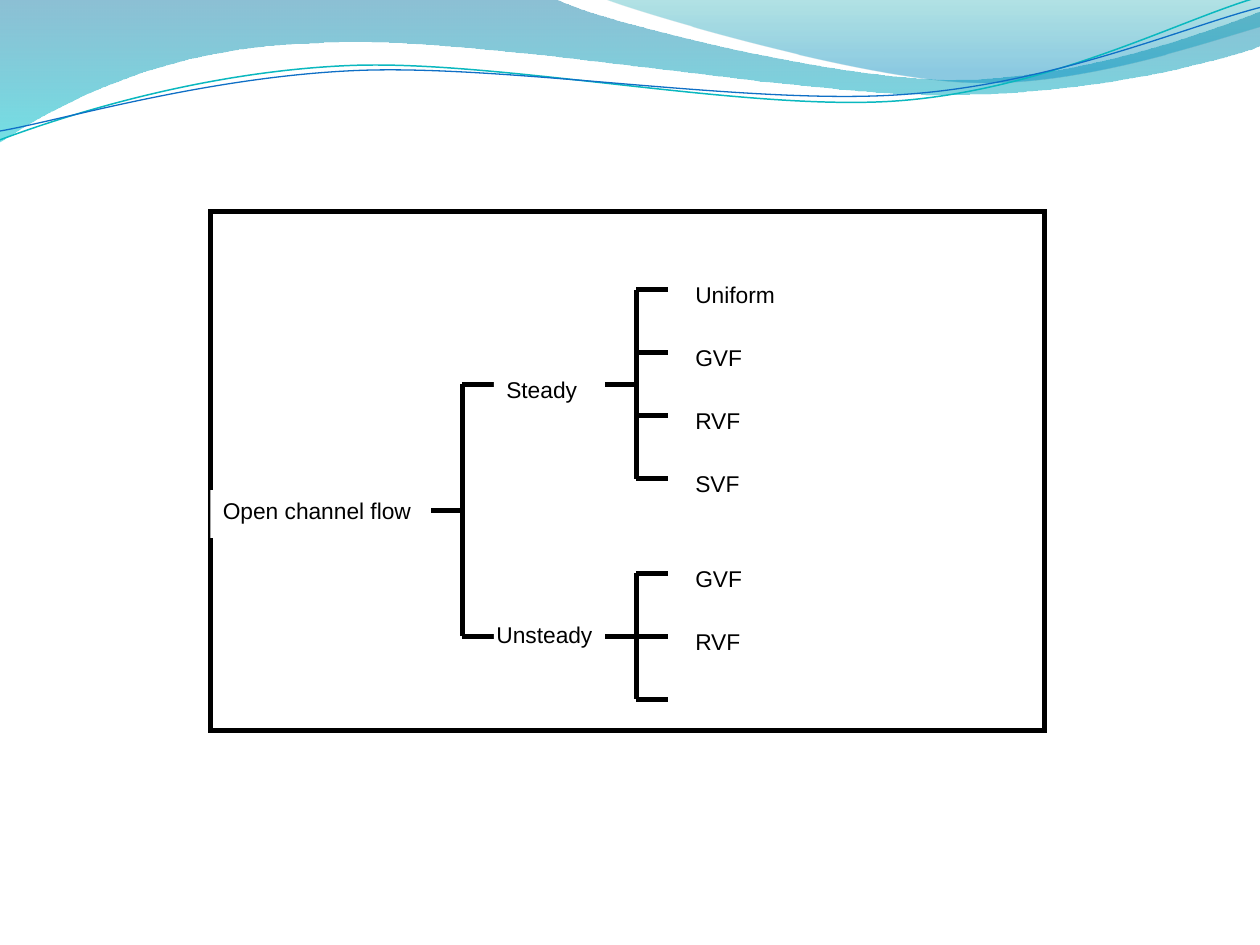
from math import cos, radians, sin

from lxml.etree import SubElement
from pptx import Presentation
from pptx.dml.color import RGBColor
from pptx.enum.shapes import MSO_CONNECTOR, MSO_SHAPE
from pptx.enum.text import MSO_ANCHOR, PP_ALIGN
from pptx.oxml.ns import qn
from pptx.util import Inches, Pt

COLORS = {
    "ink": "000000", "paper": "FFFFFF", "deep": "0074A1", "aqua": "00C6CF",
    "teal": "00A1A9", "sky": "008BBF", "teal_line": "0AB8BF", "blue_line": "0F6FC6",
}
ROOT = "Open channel flow"
BRANCHES = [
    {"text": "Steady", "height": 0.38, "inset": (0.1, 0.05),
     "leaves": [("Uniform", 0.88, 0.38), ("GVF", 0.63, 0.38),
                ("RVF", 0.63, 0.25), ("SVF", 0.63, 0.38)]},
    {"text": "Unsteady", "height": 0.25, "inset": (0.02, 0),
     "leaves": [("GVF", 0.63, 0.38), ("RVF", 0.63, 0.25), None]},
]
FILLED_WAVES = [
    ([[(0, 0)], [(4.4, -0.01)],
      [(4.76, 0.17), (6.64, 0.63), (7.58, 0.63)],
      [(8.53, 0.63), (9.58, 0.26), (10, 0.09)],
      [(10.01, 0.36)],
      [(9.83, 0.44), (8.7, 0.76), (7.46, 0.75)],
      [(6.22, 0.75), (3.82, 0.28), (2.57, 0.34)],
      [(1.29, 0.36), (0.46, 0.83), (-0.01, 1.13)],
      [(0, 0)]],
     [(0, "deep", 45), (1, "aqua", 55)]),
    ([[(4.79, -0.01)],
      [(5.09, 0.11), (6.82, 0.62), (7.69, 0.65)],
      [(8.56, 0.69), (9.61, 0.32), (10, 0.21)],
      [(10, 0)], [(4.79, -0.01)]],
     [(0, "teal", 30), (0.8, "sky", 45)]),
]
LINE_WAVES = [
    ([[(0, 1.11)],
      [(0.48, 0.93), (1.58, 0.57), (2.77, 0.52)],
      [(3.95, 0.47), (5.93, 0.89), (7.13, 0.8)],
      [(8.33, 0.71), (9.38, 0.15), (9.98, -0.02)]], (4.99, 0.58), "teal_line", 0.85),
    ([[(0, 1.04)],
      [(0.47, 0.96), (1.64, 0.61), (2.83, 0.56)],
      [(4.03, 0.51), (5.97, 0.84), (7.17, 0.75)],
      [(8.36, 0.67), (9.41, 0.21), (10, 0.06)]], (5, 0.59), "blue_line", 0.75),
]
TILT = 2.7
FRAME = (1.67, 1.68, 6.62, 4.12)
TRUNK_X, FORK_X, STUB = 3.67, 5.05, 0.25
TOP_Y, ROW, GROUP_GAP = 2.3, 0.5, 0.75
LABEL_RISE = 0.12


def color(name):
    return RGBColor.from_string(COLORS[name])


def turn(point, center, degrees):
    a = radians(degrees)
    dx, dy = point[0] - center[0], point[1] - center[1]
    return (center[0] + dx * cos(a) - dy * sin(a),
            center[1] + dx * sin(a) + dy * cos(a))


def add_wave(s, segments, closed):
    points = [(Inches(x), Inches(y)) for seg in segments for x, y in seg]
    builder = s.shapes.build_freeform(*points[0])
    builder.add_line_segments(points[1:], close=closed)
    sp = builder.convert_to_shape()
    sp.shadow.inherit = False
    steps = iter(list(sp._element.iter(qn("a:lnTo"))))
    for seg in segments[1:]:
        first, *others = [next(steps) for _ in seg]
        if others:
            curve = first.getparent().makeelement(qn("a:cubicBezTo"))
            first.addprevious(curve)
            for step in (first, *others):
                curve.append(step[0])
                step.getparent().remove(step)
    return sp


def add_filled_wave(s, segments, stops):
    sp = add_wave(s, segments, True)
    sp.line.fill.background()
    sp.fill.gradient()
    sp.fill.gradient_angle = 270
    elements = sp._element.spPr.findall(".//" + qn("a:gs"))
    for stop, element, (position, name, opacity) in zip(sp.fill.gradient_stops, elements, stops):
        stop.color.rgb = color(name)
        stop.position = position
        SubElement(element[0], qn("a:alpha"), val=str(opacity * 1000))


def add_line_wave(s, segments, center, name, width):
    level = [[turn(point, center, TILT) for point in seg] for seg in segments]
    sp = add_wave(s, level, False)
    sp.rotation = -TILT
    sp.fill.background()
    sp.line.color.rgb = color(name)
    sp.line.width = Pt(width)


def add_line(s, x1, y1, x2, y2):
    line = s.shapes.add_connector(MSO_CONNECTOR.STRAIGHT,
                                  *(Inches(v) for v in (x1, y1, x2, y2)))
    line.line.color.rgb = color("ink")
    line.line.width = Pt(3)
    SubElement(line._element.spPr, qn("a:effectLst"))


def add_rect(s, x, y, w, h):
    sp = s.shapes.add_shape(MSO_SHAPE.RECTANGLE, *(Inches(v) for v in (x, y, w, h)))
    sp.shadow.inherit = False
    return sp


def add_label(s, text, *, x, y, w, h, inset=(0.1, 0.05), size=13, font="Arial", ink="ink"):
    sp = add_rect(s, x, y, w, h)
    sp.fill.solid()
    sp.fill.fore_color.rgb = color("paper")
    sp.line.fill.background()
    tf = sp.text_frame
    tf.word_wrap = True
    tf.vertical_anchor = MSO_ANCHOR.TOP
    tf.margin_left = tf.margin_right = Inches(inset[0])
    tf.margin_top = tf.margin_bottom = Inches(inset[1])
    p = tf.paragraphs[0]
    p.alignment = PP_ALIGN.LEFT
    r = p.add_run()
    r.text = text
    r.font.size = Pt(size)
    r.font.name = font
    r.font.color.rgb = color(ink)


def add_tree(s):
    labels, centers, y = [], [], TOP_Y
    for branch in BRANCHES:
        rows = [y + ROW * i for i in range(len(branch["leaves"]))]
        center = (rows[0] + rows[-1]) / 2
        centers.append(center)
        add_line(s, TRUNK_X, center, FORK_X, center)
        add_line(s, FORK_X, rows[0], FORK_X, rows[-1])
        labels.append((branch["text"], dict(x=TRUNK_X + STUB, y=center - LABEL_RISE, w=0.88,
                                            h=branch["height"], inset=branch["inset"])))
        for row, leaf in zip(rows, branch["leaves"]):
            add_line(s, FORK_X, row, FORK_X + STUB, row)
            if leaf:
                text, w, h = leaf
                labels.append((text, dict(x=5.42, y=row - LABEL_RISE, w=w, h=h)))
        y = rows[-1] + GROUP_GAP
    middle = sum(centers) / len(centers)
    add_line(s, TRUNK_X, centers[0], TRUNK_X, centers[-1])
    add_line(s, TRUNK_X - STUB, middle, TRUNK_X, middle)
    add_label(s, ROOT, x=FRAME[0], y=middle - 0.16, w=1.75, h=0.38)
    for text, style in labels:
        add_label(s, text, **style)


def main():
    prs = Presentation()
    prs.slide_width, prs.slide_height = Inches(10), Inches(7.5)
    s = prs.slides.add_slide(prs.slide_layouts[6])
    for wave in FILLED_WAVES:
        add_filled_wave(s, *wave)
    for wave in LINE_WAVES:
        add_line_wave(s, *wave)
    frame = add_rect(s, *FRAME)
    frame.fill.background()
    frame.line.color.rgb = color("ink")
    frame.line.width = Pt(3)
    SubElement(frame.line._ln, qn("a:miter"), lim="800000")
    add_tree(s)
    prs.save("out.pptx")


if __name__ == "__main__":
    main()
